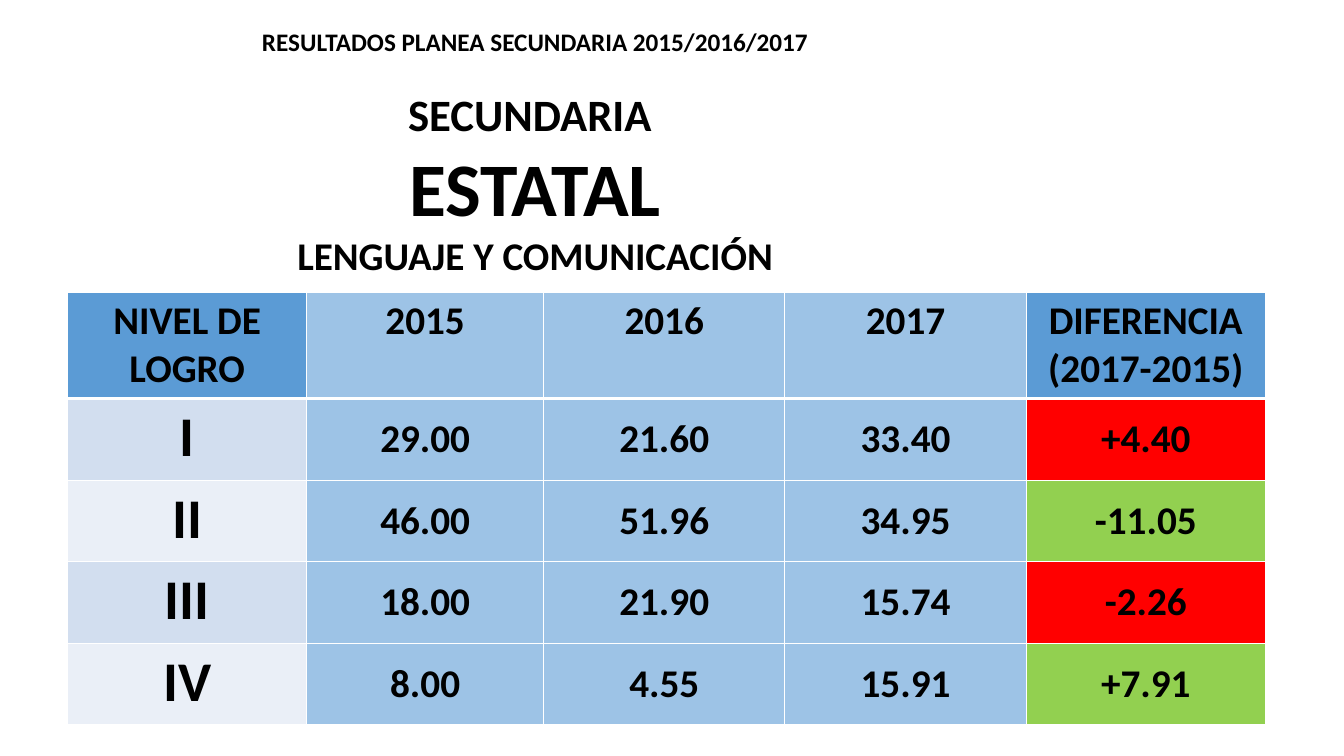
from lxml import etree
from pptx import Presentation
from pptx.dml.color import RGBColor
from pptx.enum import text
from pptx.oxml import ns
from pptx.util import Pt

BLACK = RGBColor(0x00, 0x00, 0x00)
WHITE = RGBColor(0xFF, 0xFF, 0xFF)
BLUE = RGBColor(0x5B, 0x9B, 0xD5)
LIGHT_BLUE = RGBColor(0x9D, 0xC3, 0xE6)
BAND_DARK = RGBColor(0xD2, 0xDE, 0xEF)
BAND_LIGHT = RGBColor(0xEA, 0xEF, 0xF7)
RED = RGBColor(0xFF, 0x00, 0x00)
GREEN = RGBColor(0x92, 0xD0, 0x50)

HEADINGS = [
    ("RESULTADOS PLANEA SECUNDARIA 2015/2016/2017", 18, 0),
    ("SECUNDARIA ", 32, 22),
    ("ESTATAL", 54, 0),
    ("LENGUAJE Y COMUNICACIÓN", 28, 0),
]
ROWS = [
    ("NIVEL DE LOGRO", "2015", "2016", "2017", "DIFERENCIA\n(2017-2015)"),
    ("I", "29.00", "21.60", "33.40", "+4.40"),
    ("II", "46.00", "51.96", "34.95", "-11.05"),
    ("III", "18.00", "21.90", "15.74", "-2.26"),
    ("IV", "8.00", "4.55", "15.91", "+7.91"),
]
DIFFERENCE_FILLS = [RED, GREEN, RED, GREEN]
COLUMN_WIDTHS = [170.6, 169.4, 172.2, 172.6, 170.6]
ROW_HEIGHTS = [75.6] + [58.3] * 4


def write(para, words, size=28, before=0):
    para.alignment = text.PP_ALIGN.CENTER
    para.space_before = Pt(before)
    span = para.add_run()
    span.text = words
    span.font.name = "Calibri"
    span.font.size = Pt(size)
    span.font.bold = True
    span.font.color.rgb = BLACK


def add_borders(cell, bottom):
    properties = cell._tc.get_or_add_tcPr()
    widths = {"a:lnL": 1, "a:lnR": 1, "a:lnT": 1, "a:lnB": bottom}
    for tag, width in widths.items():
        line = etree.SubElement(properties, ns.qn(tag), w=str(Pt(width)))
        fill = etree.SubElement(line, ns.qn("a:solidFill"))
        etree.SubElement(fill, ns.qn("a:srgbClr"), val=str(WHITE))


def cell_fill(row, column):
    if column == 0 and row:
        return BAND_DARK if row % 2 else BAND_LIGHT
    if column in (1, 2, 3):
        return LIGHT_BLUE
    return DIFFERENCE_FILLS[row - 1] if row else BLUE


deck = Presentation()
deck.slide_width, deck.slide_height = Pt(960), Pt(540)
page = deck.slides.add_slide(deck.slide_layouts[5])

title = page.shapes.title
title.left, title.top, title.width, title.height = Pt(141), Pt(15), Pt(482.4), Pt(189.4)
frame = title.text_frame
frame.word_wrap = True
frame.auto_size = text.MSO_AUTO_SIZE.NONE
frame.vertical_anchor = text.MSO_ANCHOR.TOP
for index, (words, size, before) in enumerate(HEADINGS):
    para = frame.add_paragraph() if index else frame.paragraphs[0]
    write(para, words, size=size, before=before)

table = page.shapes.add_table(
    len(ROWS), len(COLUMN_WIDTHS), Pt(48.4), Pt(209),
    Pt(sum(COLUMN_WIDTHS)), Pt(sum(ROW_HEIGHTS))).table
for column, width in zip(table.columns, COLUMN_WIDTHS):
    column.width = Pt(width)
for row, height in zip(table.rows, ROW_HEIGHTS):
    row.height = Pt(height)

for row, values in enumerate(ROWS):
    for column, value in enumerate(values):
        cell = table.cell(row, column)
        centred = row and column
        cell.vertical_anchor = text.MSO_ANCHOR.MIDDLE if centred else text.MSO_ANCHOR.TOP
        add_borders(cell, bottom=1 if row else 3)
        cell.fill.solid()
        cell.fill.fore_color.rgb = cell_fill(row, column)
        for index, words in enumerate(value.split("\n")):
            para = cell.text_frame.add_paragraph() if index else cell.text_frame.paragraphs[0]
            write(para, words, size=40 if row and column == 0 else 28)

deck.save("out.pptx")
